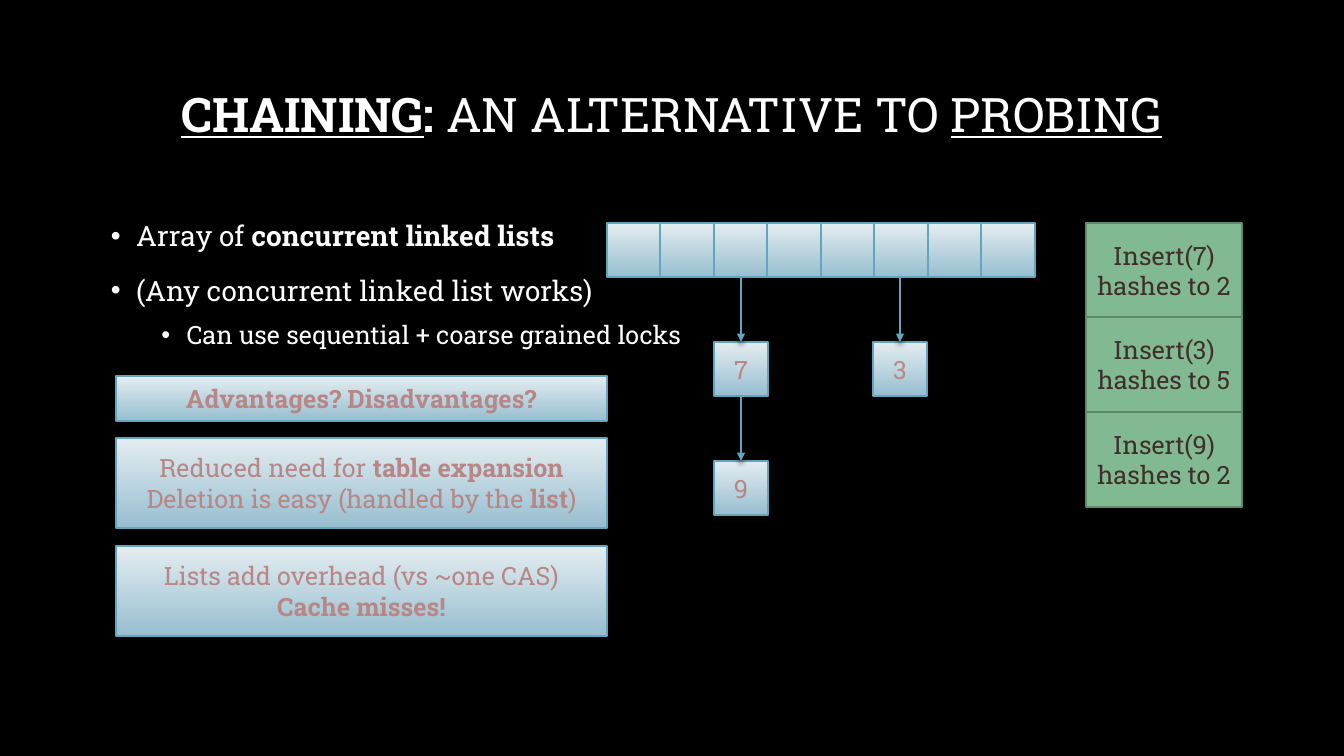
from dataclasses import dataclass

from lxml.etree import SubElement
from pptx import Presentation
from pptx.dml.color import RGBColor
from pptx.enum.shapes import MSO_CONNECTOR, MSO_SHAPE
from pptx.enum.text import MSO_ANCHOR, MSO_AUTO_SIZE, PP_ALIGN
from pptx.oxml import parse_xml
from pptx.oxml.ns import nsdecls, qn
from pptx.util import Emu, Inches, Pt


@dataclass(frozen=True)
class Theme:
    font: str = "Roboto Slab"
    background: str = "000000"
    light_text: str = "FFFFFF"
    dark_text: str = "402E2C"
    rose_text: str = "B88684"
    gradient_top: str = "E4EDF1"
    gradient_bottom: str = "97BED0"
    blue_line: str = "64A4BD"
    green_fill: str = "81B992"
    green_line: str = "5F896C"
    title_size: int = 34
    body_size: int = 20
    label_size: int = 18


THEME = Theme()
EMU_PER_PX = 914400 / 100.8
CELL = 54
CELL_COUNT = 8
ARRAY_LEFT, ARRAY_TOP, ARRAY_WIDTH = 607, 223, 428
NODE_TOP, NODE_STEP = 342, 119
CHAINS = [(714, ["7", "9"]), (873, ["3"])]
INSERT_LEFT, INSERT_WIDTH, INSERT_HEIGHT, INSERT_TOTAL = 1086, 156, 95, 284
INSERTS = [(7, 2), (3, 5), (9, 2)]
BULLETS = [
    ([("Array of ", ""), ("concurrent linked lists", "b")], 0),
    ([("(Any concurrent linked list works)", "")], 0),
    ([("Can use sequential + coarse grained locks", "")], 1),
]
PANELS = [
    (376, 45, [[("Advantages? Disadvantages?", "b")]]),
    (438, 90, [
        [("Reduced need for ", ""), ("table expansion", "b")],
        [("Deletion is easy (handled by the ", ""), ("list", "b"), (")", "")],
    ]),
    (546, 90, [
        [("Lists add overhead (vs ~one CAS)", "")],
        [("Cache misses!", "b")],
    ]),
]


def px(length):
    return Emu(round(length * EMU_PER_PX))


def rgb(value):
    return RGBColor.from_string(value)


def write_text(paragraph, runs, *, size, color, align=PP_ALIGN.CENTER,
               line_spacing=None, space_before=None):
    paragraph.alignment = align
    if line_spacing is not None:
        paragraph.line_spacing = line_spacing
    if space_before is not None:
        paragraph.space_before = Pt(space_before)
    for text, style in runs:
        run = paragraph.add_run()
        run.text = text
        run.font.name = THEME.font
        run.font.size = Pt(size)
        run.font.color.rgb = rgb(color)
        run.font.bold = "b" in style
        run.font.underline = "u" in style


def write_lines(frame, lines, **style):
    for index, runs in enumerate(lines):
        paragraph = frame.add_paragraph() if index else frame.paragraphs[0]
        write_text(paragraph, runs, **style)


def add_box(slide, left, top, width, height, lines=(), *, line, line_width,
            text_color, fill=None, wrap=True):
    shape = slide.shapes.add_shape(
        MSO_SHAPE.RECTANGLE, px(left), px(top), px(width), px(height))
    shape.shadow.inherit = False
    if fill:
        shape.fill.solid()
        shape.fill.fore_color.rgb = rgb(fill)
    else:
        shape.fill.gradient()
        shape.fill.gradient_angle = 270
        colors = (THEME.gradient_top, THEME.gradient_bottom)
        for position, (stop, color) in enumerate(zip(shape.fill.gradient_stops, colors)):
            stop.position = position
            stop.color.rgb = rgb(color)
    shape.line.color.rgb = rgb(line)
    shape.line.width = Pt(line_width)
    shape.text_frame.word_wrap = wrap
    shape.text_frame.vertical_anchor = MSO_ANCHOR.MIDDLE
    write_lines(shape.text_frame, lines, size=THEME.label_size, color=text_color)


def add_blue_box(slide, left, top, width, height, lines=(), wrap=True):
    add_box(slide, left, top, width, height, lines, line=THEME.blue_line,
            line_width=1, text_color=THEME.rose_text, wrap=wrap)


def add_arrow(slide, x, top, bottom):
    connector = slide.shapes.add_connector(
        MSO_CONNECTOR.STRAIGHT, px(x), px(top), px(x), px(bottom))
    connector.line.color.rgb = rgb(THEME.blue_line)
    connector.line.width = Pt(2)
    properties = connector._element.spPr
    SubElement(properties.find(qn("a:ln")), qn("a:tailEnd"), type="triangle")
    properties.append(parse_xml(
        f'<a:effectLst {nsdecls("a")}>'
        '<a:outerShdw blurRad="50800" dist="38100" dir="5400000" rotWithShape="0">'
        '<a:srgbClr val="000000"><a:alpha val="54000"/></a:srgbClr>'
        '</a:outerShdw></a:effectLst>'))


def add_title(slide):
    title = slide.shapes.title
    title.left, title.top, title.width, title.height = map(px, (101, 75, 1141, 84))
    frame = title.text_frame
    frame.auto_size = MSO_AUTO_SIZE.NONE
    frame.vertical_anchor = MSO_ANCHOR.MIDDLE
    runs = [("CHAINING", "bu"), (": ", "b"), ("AN ALTERNATIVE TO ", ""), ("PROBING", "u")]
    write_text(frame.paragraphs[0], runs, size=THEME.title_size,
               color=THEME.light_text, line_spacing=0.9)


def add_bullets(slide):
    box = slide.shapes.add_textbox(px(101), px(207), px(1141), px(407))
    frame = box.text_frame
    frame.word_wrap = True
    frame.auto_size = MSO_AUTO_SIZE.TEXT_TO_FIT_SHAPE
    for index, (runs, level) in enumerate(BULLETS):
        paragraph = frame.add_paragraph() if index else frame.paragraphs[0]
        paragraph.level = level
        write_text(paragraph, runs, size=THEME.label_size if level else THEME.body_size,
                   color=THEME.light_text, align=PP_ALIGN.LEFT, line_spacing=1.2,
                   space_before=5 if level else 10)
        properties = paragraph._p.get_or_add_pPr()
        properties.set("marL", str(Inches(0.25 + 0.5 * level)))
        properties.set("indent", str(Inches(-0.25)))
        SubElement(properties, qn("a:buFont"), typeface="Arial")
        SubElement(properties, qn("a:buChar"), char="•")


def add_hash_table(slide):
    for index in range(CELL_COUNT):
        left = ARRAY_LEFT + index * ARRAY_WIDTH // CELL_COUNT
        add_blue_box(slide, left, ARRAY_TOP, CELL, CELL)
    for left, values in CHAINS:
        source_bottom = ARRAY_TOP + CELL
        for index, value in enumerate(values):
            top = NODE_TOP + index * NODE_STEP
            add_blue_box(slide, left, top, CELL, CELL, [[(value, "")]], wrap=False)
            add_arrow(slide, left + CELL // 2, source_bottom, top)
            source_bottom = top + CELL


def add_inserts(slide):
    for index, (key, bucket) in enumerate(INSERTS):
        top = ARRAY_TOP + index * INSERT_TOTAL // len(INSERTS)
        lines = [[(f"Insert({key})", "")], [(f"hashes to {bucket}", "")]]
        add_box(slide, INSERT_LEFT, top, INSERT_WIDTH, INSERT_HEIGHT, lines,
                fill=THEME.green_fill, line=THEME.green_line, line_width=1.5,
                text_color=THEME.dark_text)


def main():
    presentation = Presentation()
    presentation.slide_width, presentation.slide_height = px(1344), px(756)
    slide = presentation.slides.add_slide(presentation.slide_layouts[5])
    slide.background.fill.solid()
    slide.background.fill.fore_color.rgb = rgb(THEME.background)
    add_title(slide)
    add_bullets(slide)
    add_hash_table(slide)
    add_inserts(slide)
    for top, height, lines in PANELS:
        add_blue_box(slide, 116, top, 491, height, lines)
    presentation.save("out.pptx")


if __name__ == "__main__":
    main()
